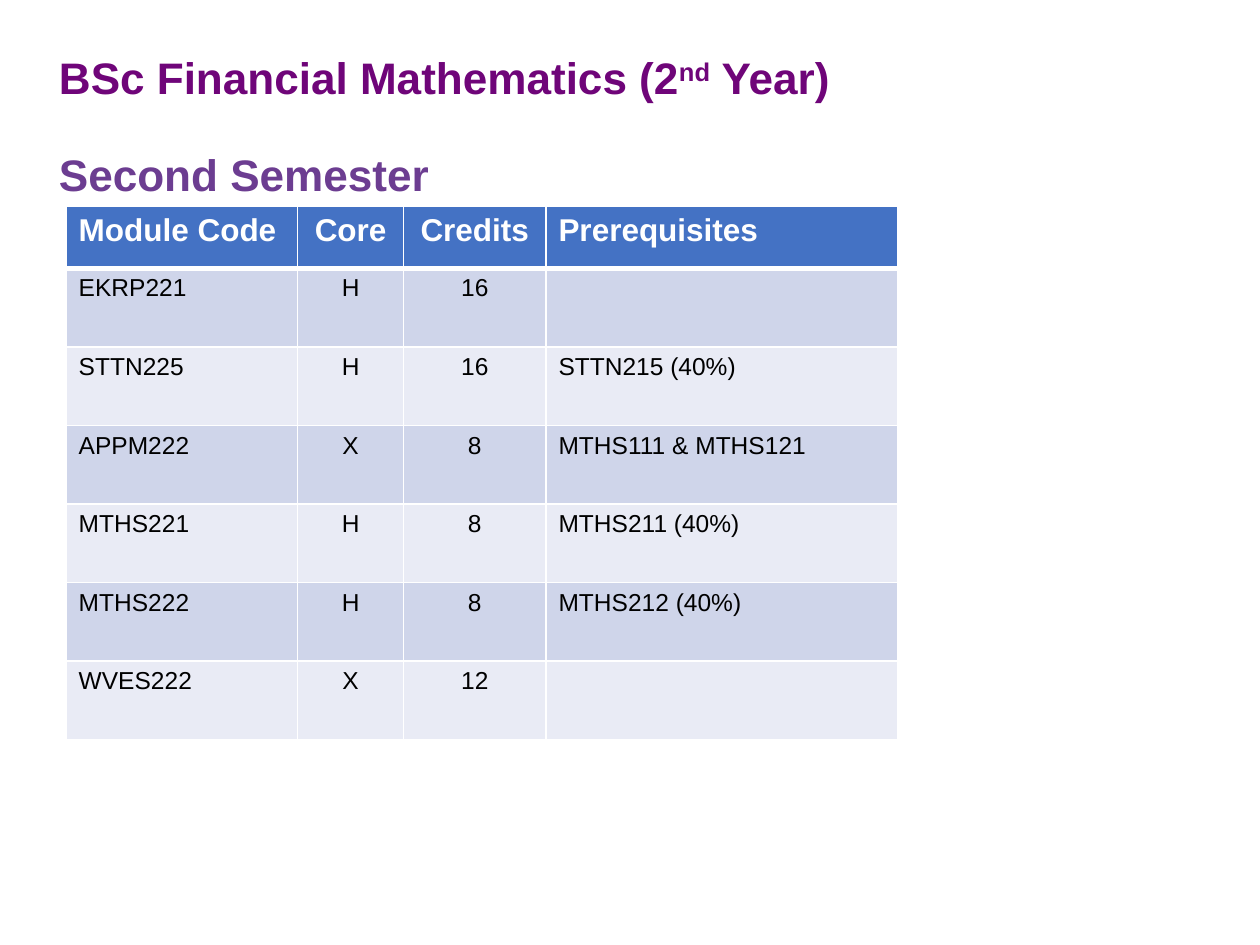
"""Build the second-semester module slide for BSc Financial Mathematics."""
from dataclasses import dataclass
from typing import Any

import lxml.etree
import pptx
import pptx.dml.color
import pptx.enum.text
import pptx.oxml.ns
import pptx.util

Pt = pptx.util.Pt
RGB = pptx.dml.color.RGBColor.from_string
ALIGN = pptx.enum.text.PP_ALIGN
qn = pptx.oxml.ns.qn


@dataclass(frozen=True)
class Theme:
    font: str = "Arial"
    title: str = "6F0579"
    subtitle: str = "6C3D91"
    header: str = "4472C4"
    bands: tuple[str, str] = ("CFD5EA", "E9EBF5")
    white: str = "FFFFFF"
    black: str = "000000"
    title_size: float = 25.2
    header_size: float = 18
    body_size: float = 14
    rule: float = 1
    header_rule: float = 3


@dataclass(frozen=True)
class Column:
    heading: str
    width: float
    align: Any


@dataclass(frozen=True)
class Module:
    code: str
    core: str
    credits: str
    prerequisites: str = ""

    def values(self) -> tuple[str, ...]:
        return self.code, self.core, self.credits, self.prerequisites


@dataclass(frozen=True)
class RowStyle:
    fill: str
    color: str
    size: float
    bold: bool
    top: float
    bottom: float


THEME = Theme()
HEADER_HEIGHT, BODY_HEIGHT = 35.3, 44.9
COLUMNS = [
    Column("Module Code", 132.3, ALIGN.LEFT),
    Column("Core", 60.6, ALIGN.CENTER),
    Column("Credits", 81.3, ALIGN.CENTER),
    Column("Prerequisites", 201, ALIGN.LEFT),
]
MODULES = [
    Module("EKRP221", "H", "16"),
    Module("STTN225", "H", "16", "STTN215 (40%)"),
    Module("APPM222", "X", "8", "MTHS111 & MTHS121"),
    Module("MTHS221", "H", "8", "MTHS211 (40%)"),
    Module("MTHS222", "H", "8", "MTHS212 (40%)"),
    Module("WVES222", "X", "12"),
]


def set_all(target: Any, formats: dict[str, Any]) -> None:
    for name, value in formats.items():
        setattr(target, name, value)


def add_run(p: Any, text: str, color: str, size: float, bold: bool) -> Any:
    r = p.add_run()
    r.text = text
    set_all(r.font, {"name": THEME.font, "size": Pt(size), "bold": bold})
    r.font.color.rgb = RGB(color)
    return r


def add_title(s: Any) -> None:
    sp = s.shapes.add_textbox(Pt(26.6), Pt(28.8), Pt(666), Pt(41.8))
    tf = sp.text_frame
    set_all(tf, {"word_wrap": True,
                 "vertical_anchor": pptx.enum.text.MSO_ANCHOR.TOP})
    p = tf.paragraphs[0]
    p.line_spacing = 0.9
    for text, baseline in (("BSc Financial Mathematics (2", 0),
                           ("nd", 30000), (" Year)", 0)):
        r = add_run(p, text, THEME.title, THEME.title_size, True)
        if baseline:
            r.font._element.set("baseline", str(baseline))
    p = tf.add_paragraph()
    set_all(p, {"line_spacing": 0.9, "space_before": Pt(28.2)})
    add_run(p, "Second Semester", THEME.subtitle, THEME.title_size, True)


def add_borders(cell: Any, style: RowStyle) -> None:
    tc_pr = cell._tc.get_or_add_tcPr()
    widths = {"lnL": THEME.rule, "lnR": THEME.rule,
              "lnT": style.top, "lnB": style.bottom}
    for side, width in widths.items():
        ln = lxml.etree.SubElement(tc_pr, qn(f"a:{side}"), w=str(Pt(width)))
        fill = lxml.etree.SubElement(ln, qn("a:solidFill"))
        lxml.etree.SubElement(fill, qn("a:srgbClr"), val=THEME.white)


def fill_cell(cell: Any, text: str, align: Any, style: RowStyle) -> None:
    add_borders(cell, style)
    cell.fill.solid()
    cell.fill.fore_color.rgb = RGB(style.fill)
    p = cell.text_frame.paragraphs[0]
    p.alignment = align
    if text:
        add_run(p, text, style.color, style.size, style.bold)


def row_style(index: int) -> RowStyle:
    if index == 0:
        return RowStyle(THEME.header, THEME.white, THEME.header_size, True,
                        THEME.rule, THEME.header_rule)
    top = THEME.header_rule if index == 1 else THEME.rule
    return RowStyle(THEME.bands[(index - 1) % 2], THEME.black,
                    THEME.body_size, False, top, THEME.rule)


def add_module_table(s: Any) -> None:
    rows = [tuple(c.heading for c in COLUMNS)] + [m.values() for m in MODULES]
    heights = [HEADER_HEIGHT] + [BODY_HEIGHT] * len(MODULES)
    table = s.shapes.add_table(
        len(rows), len(COLUMNS), Pt(37.8), Pt(118.1),
        Pt(sum(c.width for c in COLUMNS)), Pt(sum(heights))).table
    for column, spec_column in zip(table.columns, COLUMNS):
        column.width = Pt(spec_column.width)
    for i, (values, height) in enumerate(zip(rows, heights)):
        table.rows[i].height = Pt(height)
        for j, (text, column) in enumerate(zip(values, COLUMNS)):
            fill_cell(table.cell(i, j), text, column.align, row_style(i))


def main() -> None:
    prs = pptx.Presentation()
    set_all(prs, {"slide_width": Pt(720), "slide_height": Pt(540)})
    s = prs.slides.add_slide(prs.slide_layouts[6])
    add_title(s)
    add_module_table(s)
    prs.save("out.pptx")


if __name__ == "__main__":
    main()
